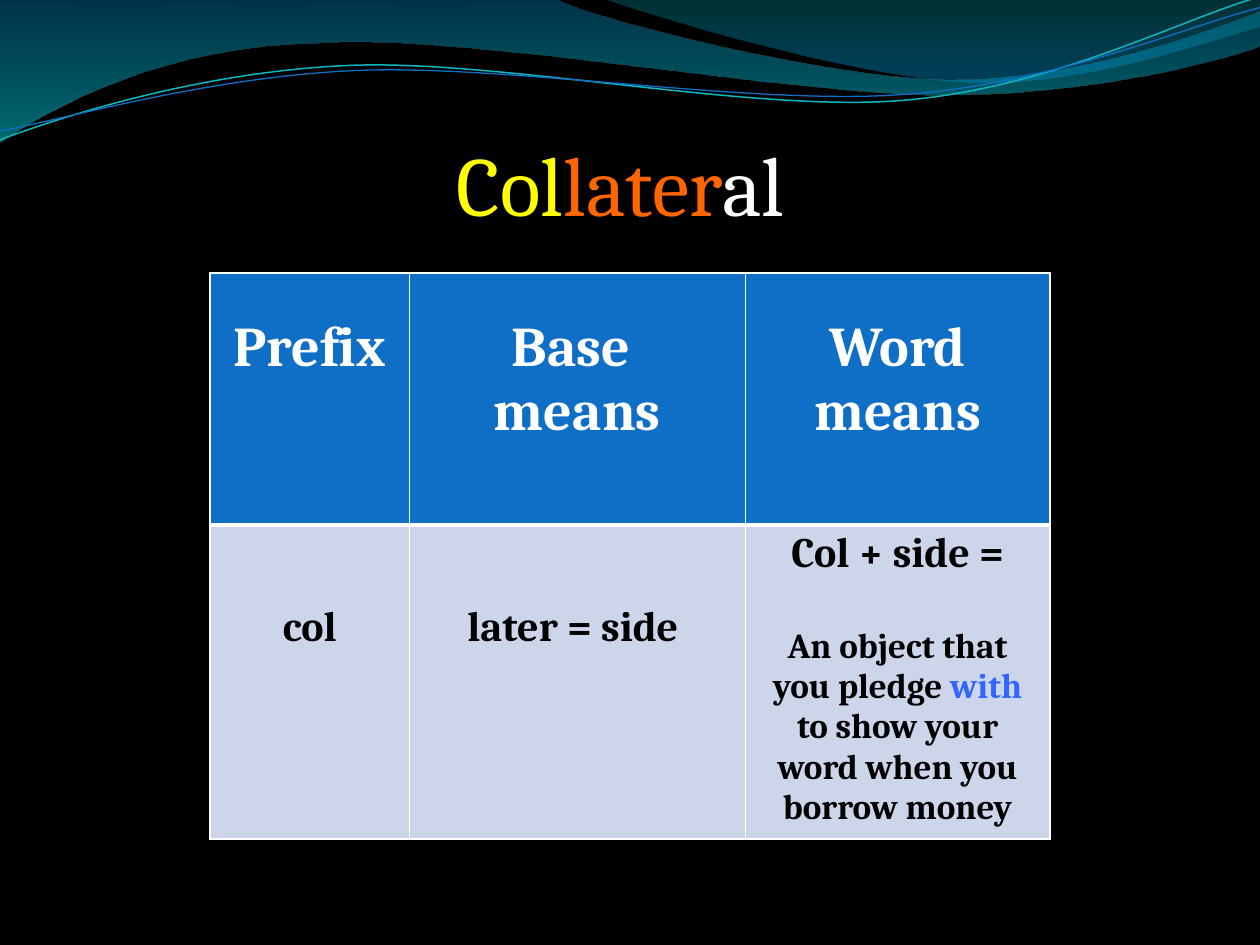
from lxml.etree import SubElement
from pptx import Presentation
from pptx.dml.color import RGBColor
from pptx.enum.text import MSO_ANCHOR, PP_ALIGN
from pptx.oxml.ns import qn
from pptx.util import Pt

THEME = {
    "font": "Cambria",
    "black": "000000", "white": "FFFFFF", "yellow": "FFFF00",
    "orange": "FF6600", "blue": "3366FF",
    "header": "0F6FC6", "body": "CCD5EA", "teal": "0AB8BF",
    "title_size": 48, "header_size": 32, "body_size": 24, "detail_size": 20,
}

TITLE = [("Col", "yellow"), ("later", "orange"), ("al ", "white")]
HEADERS = [["Prefix"], ["Base ", "means"], ["Word means"]]
MEANINGS = [["col"], ["later = side "], ["Col + side ="]]
DETAIL = [("An object that you pledge ", "black"), ("with", "blue"),
          (" to show your word when you borrow money", "black")]

COLUMN_WIDTHS = [114, 192, 174]
ROW_HEIGHTS = [144, 168.5]
TABLE_LEFT, TABLE_TOP = 120, 156
HEADER_MARGIN = 24.5
MEANING_MARGINS = [45, 45, 3]
DETAIL_GAP = 27.5

# Each wave: start point, then segments of one point (line) or three (curve), in hundredths of an inch.
BANDS = [
    ((0, 0), [[(440, -1)],
              [(476, 17), (664, 63), (758, 63)],
              [(853, 63), (958, 26), (1000, 9)],
              [(1001, 36)],
              [(983, 44), (870, 76), (746, 75)],
              [(622, 75), (382, 28), (257, 34)],
              [(129, 36), (46, 83), (-1, 113)]],
     [(0, "0074A1", 45), (1, "00C6CF", 55)]),
    ((479, -1), [[(509, 11), (682, 62), (769, 65)],
                 [(856, 69), (961, 32), (1000, 21)],
                 [(1000, 0)]],
     [(0, "00A1A9", 30), (0.8, "008BBF", 45)]),
]
STRANDS = [
    ((0, 111), [[(48, 93), (158, 57), (277, 52)],
                [(395, 47), (593, 89), (713, 80)],
                [(833, 71), (938, 15), (998, -2)]], "teal", 0.85),
    ((0, 104), [[(47, 96), (164, 61), (283, 56)],
                [(403, 51), (597, 84), (717, 75)],
                [(836, 67), (941, 21), (1000, 6)]], "header", 0.75),
]
WAVE_UNIT = Pt(0.72)


def color(name):
    return RGBColor.from_string(THEME[name])


def add_wave(page, start, segments, closed):
    builder = page.shapes.build_freeform(*start, scale=WAVE_UNIT)
    builder.add_line_segments([segment[-1] for segment in segments], close=closed)
    wave = builder.convert_to_shape()
    wave.shadow.inherit = False
    left, top = wave.left / WAVE_UNIT, wave.top / WAVE_UNIT
    for line, segment in zip(list(wave.element.iter(qn("a:lnTo"))), segments):
        if len(segment) == 3:
            line.clear()
            line.tag = qn("a:cubicBezTo")
            for x, y in segment:
                SubElement(line, qn("a:pt"), x=str(round(x - left)), y=str(round(y - top)))
    return wave


def add_band(page, start, segments, stops):
    band = add_wave(page, start, segments, True)
    band.line.fill.background()
    band.fill.gradient()
    band.fill.gradient_angle = 270
    for stop, (position, rgb, _) in zip(band.fill.gradient_stops, stops):
        stop.position = position
        stop.color.rgb = RGBColor.from_string(rgb)
    for element, (_, _, opacity) in zip(band.element.iter(qn("a:srgbClr")), stops):
        SubElement(element, qn("a:alpha"), val=str(opacity * 1000))


def add_strand(page, start, segments, name, width):
    strand = add_wave(page, start, segments, False)
    strand.fill.background()
    strand.line.color.rgb = color(name)
    strand.line.width = Pt(width)


def format_paragraph(para, size, name=None, bold=None):
    para.alignment = PP_ALIGN.CENTER
    para.font.name = THEME["font"]
    para.font.size = Pt(THEME[size])
    para.font.bold = bold
    if name:
        para.font.color.rgb = color(name)


def add_spans(para, spans):
    for text, name in spans:
        span = para.add_run()
        span.text = text
        span.font.color.rgb = color(name)


def fill_cell(cell, lines, size, text_color, fill, margin, borders):
    properties = cell._tc.get_or_add_tcPr()
    for side, width in zip("LRTB", borders):
        border = SubElement(properties, qn(f"a:ln{side}"), w=str(Pt(width)))
        solid = SubElement(border, qn("a:solidFill"))
        SubElement(solid, qn("a:srgbClr"), val=THEME["white"])
    cell.fill.solid()
    cell.fill.fore_color.rgb = color(fill)
    cell.vertical_anchor = MSO_ANCHOR.TOP
    cell.margin_top = Pt(margin)
    cell.text_frame.text = "\n".join(lines)
    for para in cell.text_frame.paragraphs:
        format_paragraph(para, size, text_color, True)


def add_title(page):
    box = page.shapes.add_textbox(Pt(36), Pt(72), Pt(648), Pt(444))
    box.text_frame.word_wrap = True
    para = box.text_frame.paragraphs[0]
    format_paragraph(para, "title_size")
    add_spans(para, TITLE)


def add_word_table(page):
    frame = page.shapes.add_table(2, 3, Pt(TABLE_LEFT), Pt(TABLE_TOP),
                                  Pt(sum(COLUMN_WIDTHS)), Pt(sum(ROW_HEIGHTS)))
    table = frame.table
    for row, height in zip(table.rows, ROW_HEIGHTS):
        row.height = Pt(height)
    for index, width in enumerate(COLUMN_WIDTHS):
        table.columns[index].width = Pt(width)
        fill_cell(table.cell(0, index), HEADERS[index], "header_size", "white",
                  "header", HEADER_MARGIN, (1, 1, 1, 3))
        fill_cell(table.cell(1, index), MEANINGS[index], "body_size", "black",
                  "body", MEANING_MARGINS[index], (1, 1, 3, 1))
    detail_cell = table.cell(1, 2)
    detail_cell.margin_bottom = 0
    detail = detail_cell.text_frame.add_paragraph()
    format_paragraph(detail, "detail_size", bold=True)
    detail.space_before = Pt(DETAIL_GAP)
    add_spans(detail, DETAIL)


def main():
    deck = Presentation()
    deck.slide_width, deck.slide_height = Pt(720), Pt(540)
    page = deck.slides.add_slide(deck.slide_layouts[6])
    page.background.fill.solid()
    page.background.fill.fore_color.rgb = color("black")
    for band in BANDS:
        add_band(page, *band)
    for strand in STRANDS:
        add_strand(page, *strand)
    add_title(page)
    add_word_table(page)
    deck.save("out.pptx")


if __name__ == "__main__":
    main()
